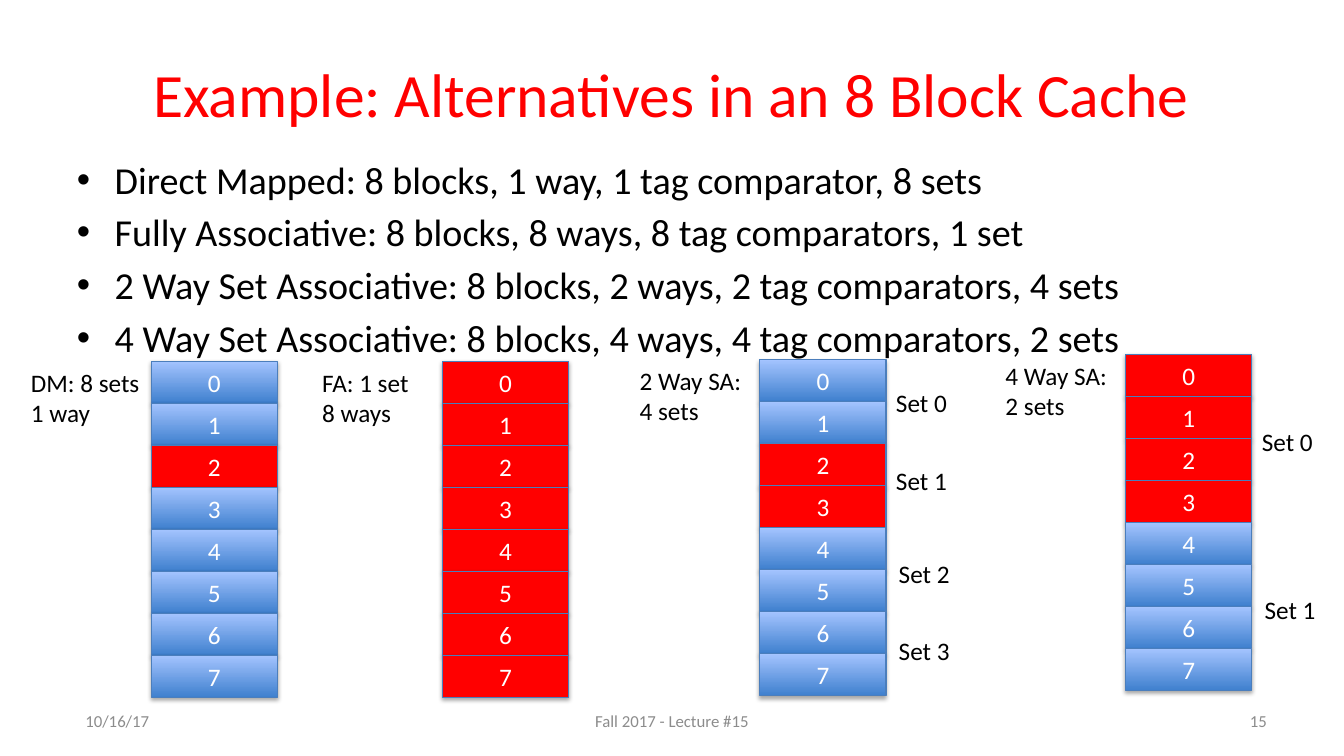
"""Build the slide comparing the set layouts of an 8 block cache."""
from dataclasses import dataclass

from lxml import etree
from pptx import Presentation
from pptx import util as u
from pptx.dml.color import RGBColor
from pptx.enum import shapes, text
from pptx.oxml.ns import qn

LEFT, CENTER, RIGHT = text.PP_ALIGN.LEFT, text.PP_ALIGN.CENTER, text.PP_ALIGN.RIGHT
TOP, MIDDLE = text.MSO_ANCHOR.TOP, text.MSO_ANCHOR.MIDDLE


@dataclass(frozen=True)
class Theme:
    font: str = "Calibri"
    accent: str = "FF0000"
    ink: str = "000000"
    muted: str = "8C8C8C"
    block_text: str = "FFFFFF"
    block_dark: str = "3F80CE"
    block_light: str = "A4C4FF"
    outline: str = "4B7EBC"
    title_size: float = 44
    bullet_size: float = 27.2
    label_size: float = 18
    footer_size: float = 12


T = Theme()
BLOCKS = 8
BLOCK_W, BLOCK_H = 3.18, 8.47 / BLOCKS
LABEL_DX, LABEL_DY = -3.28, 0.02

BULLETS = (
    "Direct Mapped: 8 blocks, 1 way, 1 tag comparator, 8 sets",
    "Fully Associative: 8 blocks, 8 ways, 8 tag comparators, 1 set",
    "2 Way Set Associative: 8 blocks, 2 ways, 2 tag comparators, 4 sets",
    "4 Way Set Associative: 8 blocks, 4 ways, 4 tag comparators, 2 sets",
)
FOOTERS = (
    ("10/16/17", 1.9, 5.93, LEFT),
    ("Fall 2017 - Lecture #15", 12.91, 8.05, CENTER),
    ("15", 26.25, 5.93, RIGHT),
)
CACHES = (
    (3.81, 9.1, ("DM: 8 sets", "1 way"), 3.28, {2}, ()),
    (11.15, 9.1, ("FA: 1 set", "8 ways"), 2.72, set(range(BLOCKS)), ()),
    (19.15, 9.06, ("2 Way SA:", "4 sets"), 3.26, {2, 3},
     ((3.18, 0.58), (3.18, 2.54), (3.25, 4.88), (3.25, 6.83))),
    (28.37, 8.93, ("4 Way SA:", "2 sets"), 3.26, {0, 1, 2, 3},
     ((3.18, 1.68), (3.25, 5.92))),
)


def rgb(value):
    """Return a colour from its hex code."""
    return RGBColor.from_string(value)


def write(tf, lines, size, color, align=LEFT, anchor=TOP):
    """Fill a text frame with one paragraph per line."""
    tf.vertical_anchor = anchor
    for i, line in enumerate(lines):
        p = tf.paragraphs[0] if i == 0 else tf.add_paragraph()
        p.alignment = align
        r = p.add_run()
        r.text = line
        r.font.name, r.font.size = T.font, u.Pt(size)
        r.font.color.rgb = rgb(color)


def add_text(parent, box, lines, size, color, align=LEFT, anchor=TOP, wrap=True):
    """Add a text box and return its text frame."""
    tf = parent.add_textbox(*map(u.Cm, box)).text_frame
    tf.word_wrap = wrap
    tf.auto_size = text.MSO_AUTO_SIZE.NONE if wrap else text.MSO_AUTO_SIZE.SHAPE_TO_FIT_TEXT
    write(tf, lines, size, color, align, anchor)
    return tf


def add_bullets(s):
    """Add the bulleted list of cache alternatives."""
    tf = add_text(s.shapes, (1.69, 3.81, 30.48, 4.88), BULLETS, T.bullet_size, T.ink)
    indent = u.Cm(0.95)
    for p in tf.paragraphs:
        p.space_before = u.Pt(5)
        pPr = p._p.get_or_add_pPr()
        pPr.set("marL", str(indent))
        pPr.set("indent", str(-indent))
        etree.SubElement(pPr, qn("a:buFont"), typeface="Arial")
        etree.SubElement(pPr, qn("a:buChar"), char="•")


def add_shadow(sp):
    """Give a shape a soft shadow below it."""
    sp.shadow.inherit = False
    effects = sp._element.spPr.find(qn("a:effectLst"))
    shadow = etree.SubElement(effects, qn("a:outerShdw"), blurRad="40000",
                              dist="23000", dir="5400000", rotWithShape="0")
    color = etree.SubElement(shadow, qn("a:srgbClr"), val=T.ink)
    etree.SubElement(color, qn("a:alpha"), val="35000")


def add_block(parent, x, y, number, marked):
    """Add one numbered cache block."""
    sp = parent.add_shape(shapes.MSO_SHAPE.RECTANGLE,
                          *map(u.Cm, (x, y, BLOCK_W, BLOCK_H)))
    if marked:
        sp.fill.solid()
        sp.fill.fore_color.rgb = rgb(T.accent)
    else:
        sp.fill.gradient()
        sp.fill.gradient_angle = 90
        for stop, color in zip(sp.fill.gradient_stops, (T.block_dark, T.block_light)):
            stop.color.rgb = rgb(color)
    sp.line.color.rgb = rgb(T.outline)
    sp.line.width = u.Pt(0.75)
    add_shadow(sp)
    write(sp.text_frame, [str(number)], T.label_size, T.block_text, CENTER, MIDDLE)


def add_cache(s, x, y, label, label_w, marked, set_offsets):
    """Add a grouped column of blocks with its labels."""
    group = s.shapes.add_group_shape().shapes
    for n in range(BLOCKS):
        add_block(group, x, y + n * BLOCK_H, n, n in marked)
    add_text(group, (x + LABEL_DX, y + LABEL_DY, label_w, 1.8), label,
             T.label_size, T.ink, wrap=False)
    for n, (dx, dy) in enumerate(set_offsets):
        add_text(group, (x + dx, y + dy, 1.8, 1.02), [f"Set {n}"],
                 T.label_size, T.ink, wrap=False)


def main():
    """Build and save the slide."""
    prs = Presentation()
    prs.slide_width, prs.slide_height = u.Cm(33.87), u.Cm(19.05)
    s = prs.slides.add_slide(prs.slide_layouts[6])
    add_text(s.shapes, (1.69, 0.76, 30.48, 3.18), ["Example: Alternatives in an 8 Block Cache"],
             T.title_size, T.accent, CENTER, MIDDLE)
    add_bullets(s)
    for line, x, w, align in FOOTERS:
        add_text(s.shapes, (x, 17.65, w, 1.01), [line], T.footer_size, T.muted, align, MIDDLE)
    for cache in CACHES:
        add_cache(s, *cache)
    prs.save("out.pptx")


if __name__ == "__main__":
    main()
